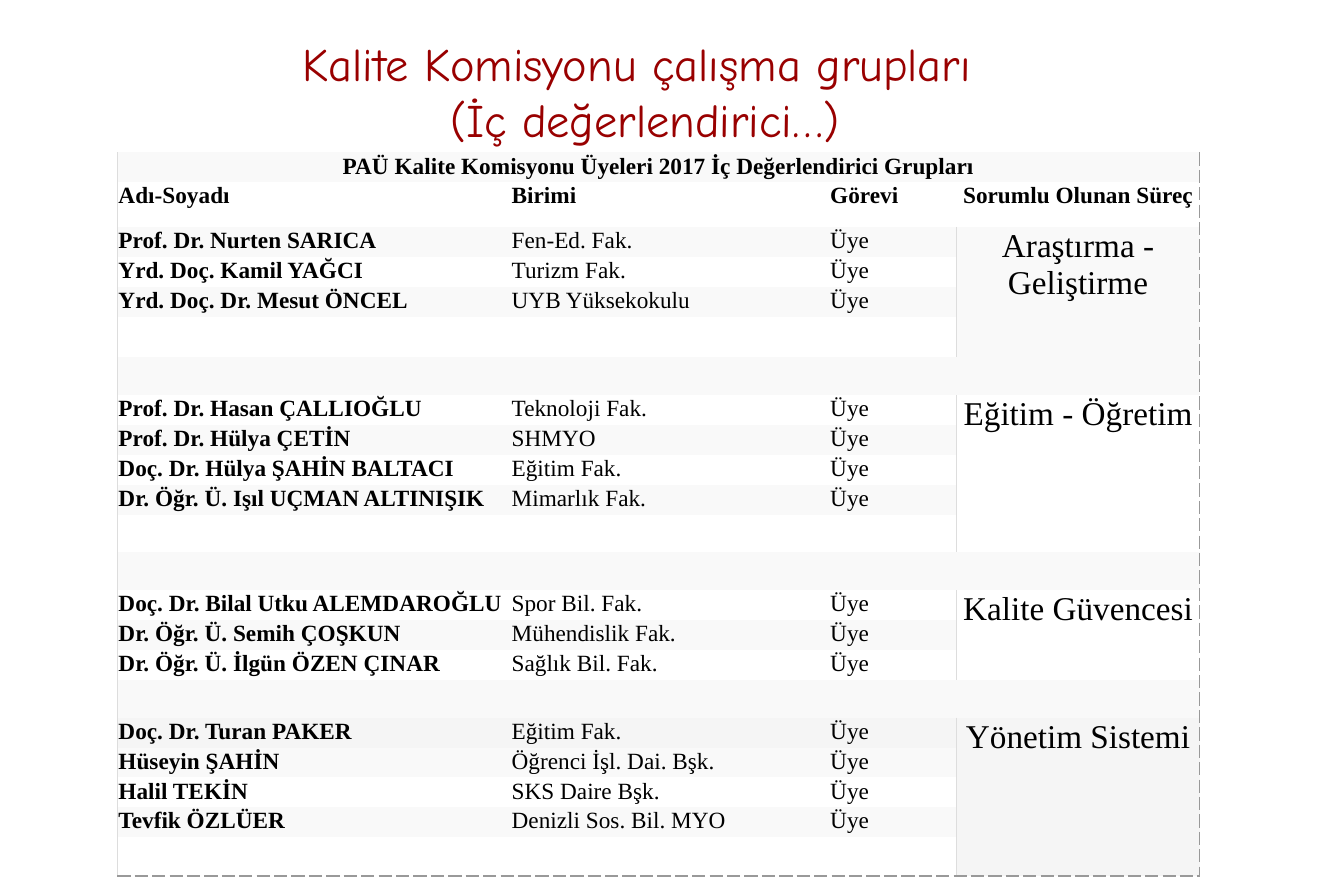
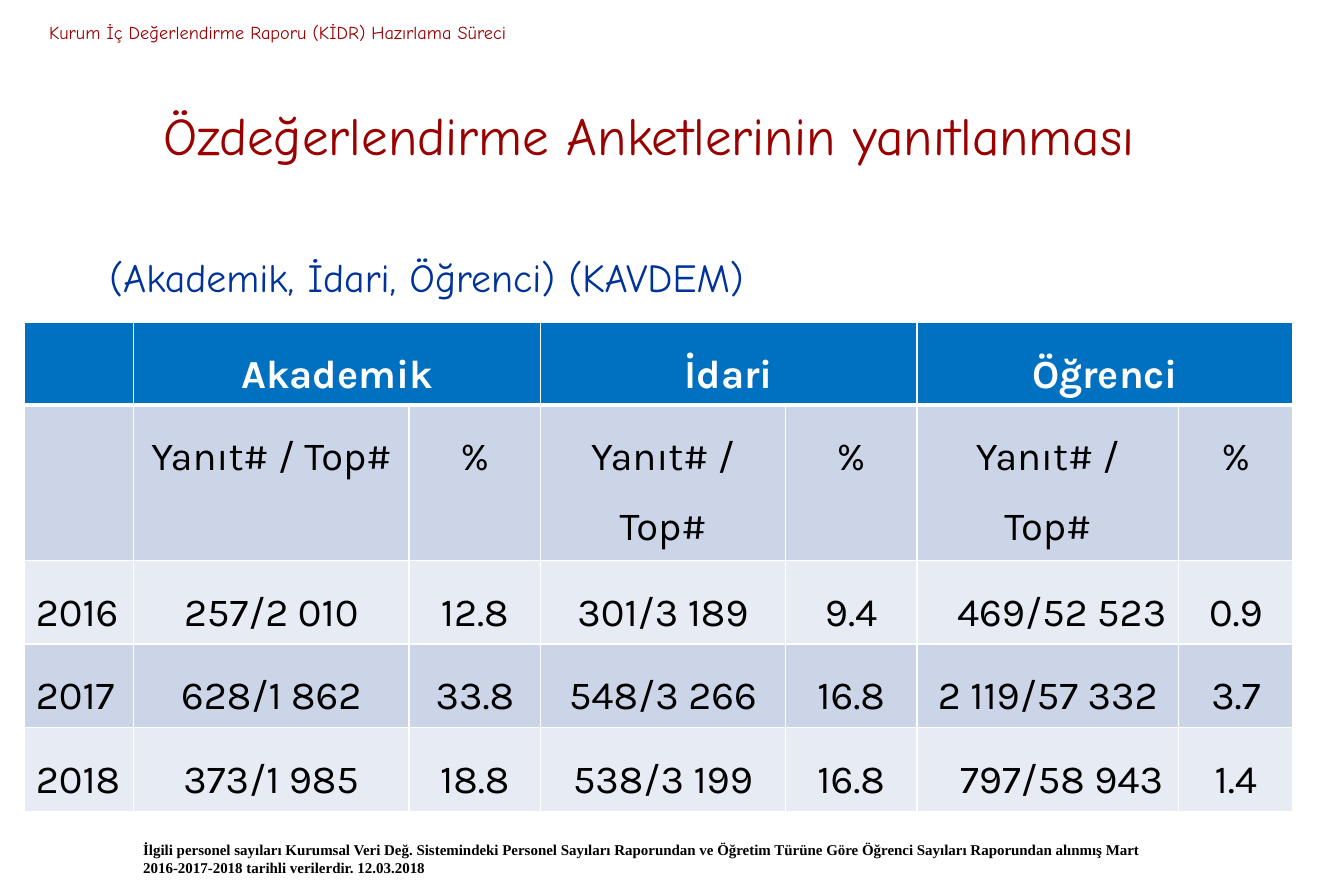
from lxml import etree
from pptx import Presentation
from pptx import util as u
from pptx.dml import color
from pptx.enum import text
from pptx.oxml import ns

PX = 7620
WIDTH, HEIGHT = 1350, 900
RED, BLUE, BLACK, WHITE = "990000", "003399", "000000", "FFFFFF"
STRIPE, STRIPE_DARK = "F9F9F9", "F5F5F5"
HEADER_BLUE, BAND_DARK, BAND_LIGHT = "0070C0", "CCD5E8", "E7EBF4"
TITLE_FONT, TABLE_FONT, SERIF = "Comic Neue", "Karla", "Times New Roman"
NO_STYLE = "{2D5ABB26-0587-4C30-8999-92F81FD0307C}"
LEFT, CENTER = text.PP_ALIGN.LEFT, text.PP_ALIGN.CENTER
TOP, MIDDLE = text.MSO_ANCHOR.TOP, text.MSO_ANCHOR.MIDDLE
THIN, DASHED = ("DDDDDD", 0.38, "solid"), ("999999", 1, "dash")
GRID, HEADER_RULE = (WHITE, 1, "solid"), (WHITE, 3, "solid")

GROUPS_TITLE = "Kalite Komisyonu çalışma grupları \n(İç değerlendirici…)"
GROUPS_CAPTION = "PAÜ Kalite Komisyonu Üyeleri 2017 İç Değerlendirici Grupları"
GROUPS_HEADER = ["Adı-Soyadı", "Birimi", "Görevi", "Sorumlu Olunan Süreç"]
ROLE = "Üye"
GROUPS = [
    ("Araştırma - Geliştirme", 41, [
        ("Prof. Dr. Nurten SARICA", "Fen-Ed. Fak."),
        ("Yrd. Doç. Kamil YAĞCI", "Turizm Fak."),
        ("Yrd. Doç. Dr. Mesut ÖNCEL", "UYB Yüksekokulu")]),
    ("Eğitim - Öğretim", 38, [
        ("Prof. Dr. Hasan ÇALLIOĞLU", "Teknoloji Fak."),
        ("Prof. Dr. Hülya ÇETİN", "SHMYO"),
        ("Doç. Dr. Hülya ŞAHİN BALTACI", "Eğitim Fak."),
        ("Dr. Öğr. Ü. Işıl UÇMAN ALTINIŞIK", "Mimarlık Fak.")]),
    ("Kalite Güvencesi", 0, [
        ("Doç. Dr. Bilal Utku ALEMDAROĞLU", "Spor Bil. Fak."),
        ("Dr. Öğr. Ü. Semih ÇOŞKUN", "Mühendislik Fak."),
        ("Dr. Öğr. Ü. İlgün ÖZEN ÇINAR", "Sağlık Bil. Fak.")]),
    ("Yönetim Sistemi", 39, [
        ("Doç. Dr. Turan PAKER", "Eğitim Fak."),
        ("Hüseyin ŞAHİN", "Öğrenci İşl. Dai. Bşk."),
        ("Halil TEKİN", "SKS Daire Bşk."),
        ("Tevfik ÖZLÜER", "Denizli Sos. Bil. MYO")]),
]
GROUPS_COLUMNS = [395, 320, 128, 244]
MEMBER_ROW, HEADER_ROW, GAP_ROW = 30, 45, 38

SURVEY_LABEL = "Kurum İç Değerlendirme Raporu (KİDR) Hazırlama Süreci"
SURVEY_TITLE = "Özdeğerlendirme Anketlerinin yanıtlanması "
SURVEY_SUBTITLE = "(Akademik, İdari, Öğrenci) (KAVDEM)"
SURVEY_NOTE = (
    "İlgili personel sayıları Kurumsal Veri Değ. Sistemindeki Personel Sayıları "
    "Raporundan ve Öğretim Türüne Göre Öğrenci Sayıları Raporundan alınmış Mart "
    "2016-2017-2018 tarihli verilerdir. 12.03.2018")
SURVEY_ROWS = [
    ["", "Akademik", "", "İdari", "", "Öğrenci", ""],
    [""] + ["Yanıt# / Top#", "%"] * 3,
    ["2016", "257/2 010", "12.8", "301/3 189", "9.4", "469/52 523", "0.9"],
    ["2017", "628/1 862", "33.8", "548/3 266", "16.8", "2 119/57 332", "3.7"],
    ["2018", "373/1 985", "18.8", "538/3 199", "16.8", "797/58 943", "1.4"],
]
SURVEY_COLUMNS = [110, 277, 132, 246, 132, 263, 115]
SURVEY_HEIGHTS = [83, 156, 84, 84, 84]
INDENTED = {"469/52 523", "797/58 943"}


def rgb(value):
    return color.RGBColor.from_string(value)


def assign(target, values):
    for name, value in values.items():
        setattr(target, name, value)


def write(frame, content, size, font, ink, bold=False, align=LEFT, spacing=1.0):
    frame.text = content
    for paragraph in frame.paragraphs:
        assign(paragraph, {"alignment": align, "line_spacing": spacing,
                           "space_before": u.Pt(0)})
        for run in paragraph.runs:
            assign(run.font, {"size": u.Pt(size), "name": font, "bold": bold})
            run.font.color.rgb = rgb(ink)
        if not paragraph.runs:
            etree.SubElement(paragraph._p, ns.qn("a:endParaRPr"), sz=str(size * 100))


def place(shape, box, content, size, font, ink, anchor=TOP, **style):
    for name, value in zip(("left", "top", "width", "height"), box):
        setattr(shape, name, value * PX)
    assign(shape.text_frame, {"word_wrap": True, "vertical_anchor": anchor,
                              "auto_size": text.MSO_AUTO_SIZE.NONE})
    write(shape.text_frame, content, size, font, ink, **style)


def add_text(slide, box, *content, **style):
    place(slide.shapes.add_textbox(0, 0, 0, 0), box, *content, **style)


def add_title(slide, box, content, size):
    place(slide.shapes.title, box, content, size, TITLE_FONT, RED,
          anchor=MIDDLE, align=CENTER)


def new_table(slide, left, top, columns, heights):
    frame = slide.shapes.add_table(len(heights), len(columns), left * PX, top * PX,
                                   sum(columns) * PX, sum(heights) * PX)
    table = frame.table
    table._tbl.tblPr.find(ns.qn("a:tableStyleId")).text = NO_STYLE
    assign(table, {"first_row": False, "horz_banding": False})
    for column, width in zip(table.columns, columns):
        column.width = width * PX
    for row, height in zip(table.rows, heights):
        row.height = height * PX
    return table


def finish_cell(cell, fill, borders):
    properties = cell._tc.get_or_add_tcPr()
    for side in "LRTB":
        if side in borders:
            ink, width, dash = borders[side]
            line = etree.SubElement(properties, ns.qn("a:ln" + side),
                                    w=str(int(u.Pt(width))))
            solid = etree.SubElement(line, ns.qn("a:solidFill"))
            etree.SubElement(solid, ns.qn("a:srgbClr"), val=ink)
            etree.SubElement(line, ns.qn("a:prstDash"), val=dash)
    if fill:
        cell.fill.solid()
        cell.fill.fore_color.rgb = rgb(fill)
    else:
        cell.fill.background()


def group_rows():
    rows = [([GROUPS_CAPTION, "", "", ""], MEMBER_ROW), (GROUPS_HEADER, HEADER_ROW)]
    spans = []
    for name, blank, members in GROUPS:
        if spans:
            rows.append(([""] * 4, GAP_ROW))
        first = len(rows)
        for index, (person, unit) in enumerate(members):
            rows.append(([person, unit, ROLE, "" if index else name], MEMBER_ROW))
        if blank:
            rows.append(([""] * 4, blank))
        spans.append((first, len(rows) - 1))
    return rows, spans


def build_groups(presentation):
    slide = presentation.slides.add_slide(presentation.slide_layouts[5])
    add_title(slide, (71, 16, 1153, 151), GROUPS_TITLE, 28)
    rows, spans = group_rows()
    table = new_table(slide, 118, 153, GROUPS_COLUMNS, [height for _, height in rows])
    last = len(rows) - 1
    for index, (values, _) in enumerate(rows):
        span = next((s for s in spans if s[0] <= index <= s[1]), None)
        for column, value in enumerate(values):
            fill_row = span[0] if span and column == 3 else index
            fill = None if fill_row % 2 else STRIPE
            if fill_row == spans[-1][0]:
                fill = STRIPE_DARK
            borders = {}
            if column == 0:
                borders["L"] = THIN
            if column == 3 or index == 0:
                borders["R"] = DASHED
            if span and column == 2:
                borders["R"] = THIN
            if span and column == 3:
                borders["L"] = THIN
            if index == last or (span == spans[-1] and column == 3 and index == span[0]):
                borders["B"] = DASHED
            cell = table.cell(index, column)
            in_group = bool(span) and column == 3
            write(cell.text_frame, value, 20 if in_group else 14, SERIF, BLACK,
                  bold=index < 2 or column == 0,
                  align=CENTER if index == 0 or column == 3 else LEFT)
            assign(cell, {"margin_" + side: PX
                          for side in ("left", "right", "top", "bottom")})
            finish_cell(cell, fill, borders)
    table.cell(0, 0).merge(table.cell(0, 3))
    for first, end in spans:
        table.cell(first, 3).merge(table.cell(end, 3))


def build_survey(presentation):
    slide = presentation.slides.add_slide(presentation.slide_layouts[0])
    add_title(slide, (89, 65, 1144, 140), SURVEY_TITLE, 32)
    place(slide.placeholders[1], (98, 223, 1200, 85), SURVEY_SUBTITLE, 24,
          TITLE_FONT, BLUE, anchor=MIDDLE, spacing=1.5)
    table = new_table(slide, 24, 324, SURVEY_COLUMNS, SURVEY_HEIGHTS)
    for index, values in enumerate(SURVEY_ROWS):
        header = index == 0
        fill = HEADER_BLUE if header else BAND_DARK if index % 2 else BAND_LIGHT
        borders = dict.fromkeys("LRTB", GRID)
        if header:
            borders["B"] = HEADER_RULE
        elif index == 1:
            borders["T"] = HEADER_RULE
        for column, value in enumerate(values):
            cell = table.cell(index, column)
            write(cell.text_frame, value, 24, TABLE_FONT, WHITE if header else BLACK,
                  bold=header, align=CENTER if column else LEFT, spacing=1.5)
            if value in INDENTED:
                assign(cell, {"margin_left": 34 * PX, "margin_right": 6 * PX})
            finish_cell(cell, fill, borders)
    for column in (1, 3, 5):
        table.cell(0, column).merge(table.cell(0, column + 1))
    add_text(slide, (132, 838, 1039, 48), SURVEY_NOTE, 9, SERIF, BLACK, bold=True)
    add_text(slide, (0, 0, 558, 65), SURVEY_LABEL, 11, TITLE_FONT, RED,
             anchor=MIDDLE, align=CENTER)


def main():
    presentation = Presentation()
    assign(presentation, {"slide_width": WIDTH * PX, "slide_height": HEIGHT * PX})
    build_groups(presentation)
    build_survey(presentation)
    presentation.save("out.pptx")


if __name__ == "__main__":
    main()
